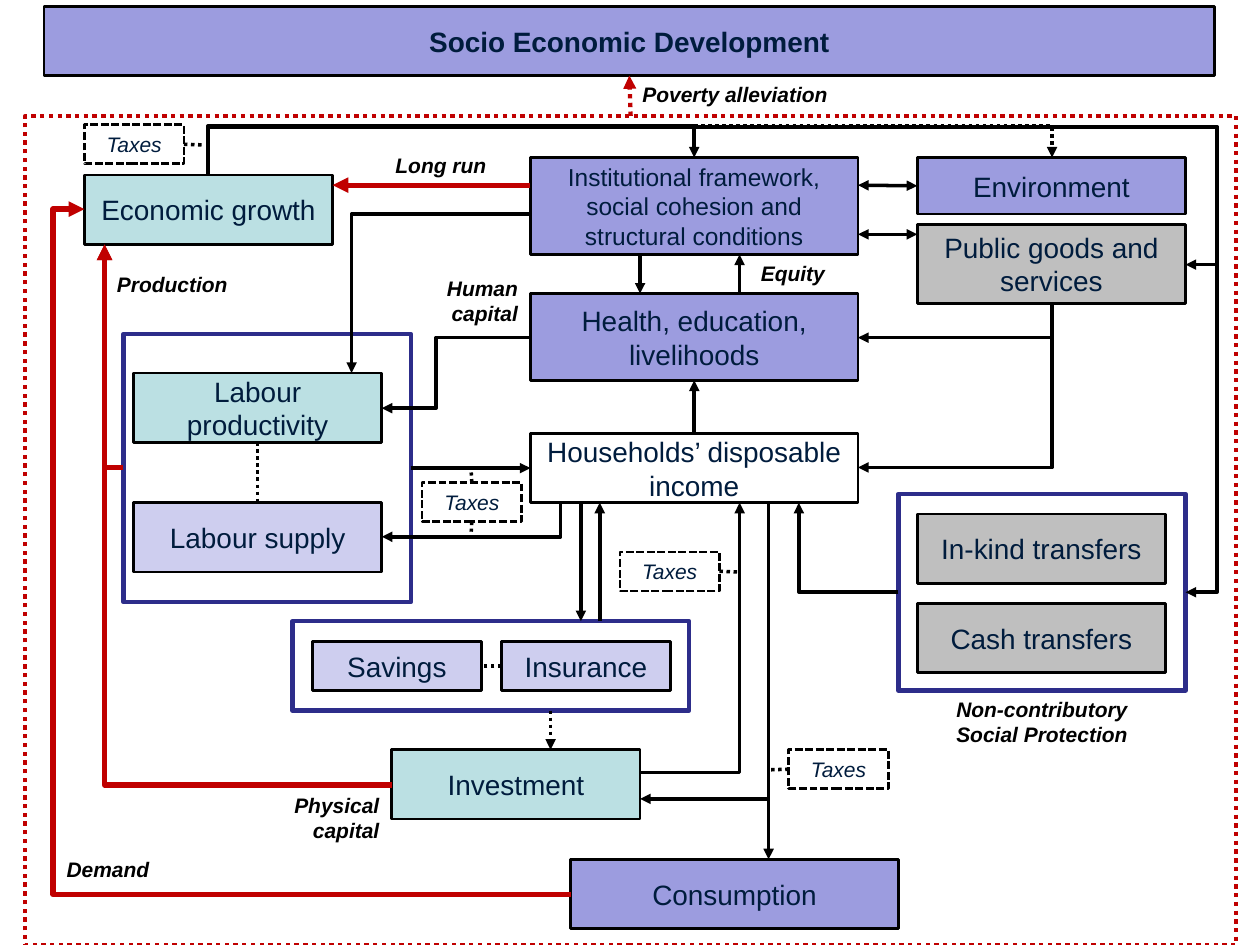
import lxml.etree
import pptx
import pptx.dml.color
import pptx.enum.dml
import pptx.enum.shapes
import pptx.enum.text
import pptx.oxml.ns
import pptx.util

Inches = pptx.util.Inches
DASH = pptx.enum.dml.MSO_LINE
ALIGN = pptx.enum.text.PP_ALIGN
TOP, LEFT, BOTTOM, RIGHT = range(4)
COLORS = {"black": "000000", "navy": "001C3D", "red": "C00000", "frame": "2D2D8A",
          "violet": "9C9CDF", "lilac": "CECEEF", "teal": "BBE0E3", "grey": "BFBFBF"}
LINES = {
    "flow": {"color": "black", "width": 2, "tail": True},
    "two-way": {"color": "black", "width": 2, "head": True, "tail": True},
    "link": {"color": "black", "width": 2, "dash": DASH.ROUND_DOT},
    "dotted": {"color": "black", "width": 2, "dash": DASH.ROUND_DOT, "tail": True},
    "growth": {"color": "red", "width": 3, "tail": True},
    "goal": {"color": "red", "width": 2.5, "dash": DASH.ROUND_DOT, "tail": True},
    "scope": {"color": "red", "width": 2.5, "dash": DASH.ROUND_DOT},
    "group": {"color": "frame", "width": 2.5},
    "box": {"color": "black", "width": 1.5},
    "tax": {"color": "black", "width": 1.5, "dash": DASH.SQUARE_DOT},
}


def rgb(name):
    """Return the named colour."""
    return pptx.dml.color.RGBColor.from_string(COLORS[name])


def style_line(shape, name):
    """Give a shape or connector one of the named line styles."""
    style = LINES[name]
    line = shape.line
    line.color.rgb = rgb(style["color"])
    line.width = pptx.util.Pt(style["width"])
    if "dash" in style:
        line.dash_style = style["dash"]
    properties = shape._element.spPr.find(pptx.oxml.ns.qn("a:ln"))
    for key, tag in (("head", "a:headEnd"), ("tail", "a:tailEnd")):
        if style.get(key):
            end = lxml.etree.SubElement(properties, pptx.oxml.ns.qn(tag))
            end.set("type", "triangle")


def write(shape, text, alignment, color, **formats):
    """Write the lines of text into a shape with one format."""
    frame = shape.text_frame
    frame.word_wrap = True
    for index, words in enumerate(text.split("\n")):
        paragraph = frame.add_paragraph() if index else frame.paragraphs[0]
        paragraph.alignment = alignment
        run = paragraph.add_run()
        run.text = words
        run.font.color.rgb = rgb(color)
        for key, value in {"name": "Arial", **formats}.items():
            setattr(run.font, key, value)


def add_box(slide, box, text="", fill=None, line="box", size=16, **formats):
    """Add a rectangle with centred text and return it."""
    shape = slide.shapes.add_shape(
        pptx.enum.shapes.MSO_SHAPE.RECTANGLE, *map(Inches, box))
    shape.shadow.inherit = False
    if fill:
        shape.fill.solid()
        shape.fill.fore_color.rgb = rgb(fill)
    else:
        shape.fill.background()
    style_line(shape, line)
    if text:
        shape.text_frame.vertical_anchor = pptx.enum.text.MSO_ANCHOR.MIDDLE
        write(shape, text, ALIGN.CENTER, "navy", size=pptx.util.Pt(size), **formats)
    return shape


def add_label(slide, box, text, alignment=ALIGN.LEFT):
    """Add a bold italic label."""
    shape = slide.shapes.add_textbox(*map(Inches, box))
    write(shape, text, alignment, "black", size=pptx.util.Pt(12), bold=True, italic=True)


def add_straight(slide, name, start, end, begin=None, finish=None):
    """Add a straight connector, joined to (shape, side) where given."""
    connector = slide.shapes.add_connector(
        pptx.enum.shapes.MSO_CONNECTOR.STRAIGHT, *map(Inches, start + end))
    if begin:
        connector.begin_connect(*begin)
    if finish:
        connector.end_connect(*finish)
    style_line(connector, name)
    lxml.etree.SubElement(connector._element.spPr, pptx.oxml.ns.qn("a:effectLst"))


def add_route(slide, name, *points):
    """Add a line with right-angled bends through the points."""
    corners = [tuple(map(Inches, point)) for point in points]
    builder = slide.shapes.build_freeform(*corners[0])
    builder.add_line_segments(corners[1:], close=False)
    shape = builder.convert_to_shape()
    shape.shadow.inherit = False
    shape.fill.background()
    style_line(shape, name)


def draw_goal(slide, left, top):
    """Draw the development banner above the dotted scope."""
    goal = add_box(slide, (left + 0.15, top, 9.29, 0.55), "Socio Economic Development",
                   "violet", bold=True)
    scope = add_box(slide, (left, top + 0.87, 9.61, 6.58), line="scope")
    add_straight(slide, "goal", (5, 0.92), (5, 0.6), (scope, TOP), (goal, BOTTOM))
    add_label(slide, (left + 4.8, top + 0.55, 1.73, 0.3), "Poverty alleviation")


def draw_labour(slide, left, top):
    """Draw the labour group and return its frame."""
    frame = add_box(slide, (left, top, 2.28, 2.13), line="group")
    productivity, supply = [
        add_box(slide, (left + 0.08, top + drop, 1.97, 0.55), text, fill)
        for drop, text, fill in ((0.31, "Labour productivity", "teal"),
                                 (1.34, "Labour supply", "lilac"))]
    add_straight(slide, "link", (2.05, 3.51), (2.05, 3.99),
                 (productivity, BOTTOM), (supply, TOP))
    return frame


def draw_savings(slide, left, top):
    """Draw the savings and insurance group."""
    add_box(slide, (left, top, 3.15, 0.71), line="group")
    savings, insurance = [
        add_box(slide, (left + shift, top + 0.16, 1.34, 0.39), text, "lilac")
        for shift, text in ((0.16, "Savings"), (1.66, "Insurance"))]
    add_straight(slide, "link", (3.98, 5.29), (3.82, 5.29),
                 (insurance, LEFT), (savings, RIGHT))


def draw_transfers(slide, left, top):
    """Draw the social protection group with its caption."""
    add_box(slide, (left, top, 2.28, 1.56), line="group")
    for drop, text in ((0.16, "In-kind transfers"), (0.87, "Cash transfers")):
        add_box(slide, (left + 0.15, top + drop, 1.97, 0.55), text, "grey")
    add_label(slide, (left, top + 1.56, 2.28, 0.5),
              "Non-contributory\nSocial Protection", ALIGN.CENTER)


def draw_conditions(slide, left, top):
    """Draw the central chain of boxes and its two neighbours."""
    institution = "Institutional framework, social cohesion and structural conditions"
    add_box(slide, (left, top, 2.6, 0.77), institution, "violet", size=14)
    health = add_box(slide, (left, top + 1.08, 2.6, 0.69),
                     "Health, education, livelihoods", "violet")
    income = add_box(slide, (left, top + 2.19, 2.6, 0.55), "Households’ disposable income")
    environment = add_box(slide, (left + 3.07, top, 2.13, 0.45), "Environment", "violet")
    add_box(slide, (left + 3.07, top + 0.53, 2.13, 0.63),
            "Public goods and services", "grey")
    add_straight(slide, "flow", (5.51, 3.44), (5.51, 3.02), (income, TOP), (health, BOTTOM))
    add_straight(slide, "two-way", (7.28, 1.47), (6.81, 1.47), (environment, LEFT))
    return income


def draw_outputs(slide, left, top):
    """Draw growth, investment and consumption."""
    add_box(slide, (left, top, 1.97, 0.55), "Economic growth", "teal")
    add_box(slide, (left + 2.44, top + 4.56, 1.97, 0.55), "Investment", "teal")
    add_box(slide, (left + 3.86, top + 5.43, 2.6, 0.55), "Consumption", "violet")


def draw_tax(slide, left, top, *ties):
    """Draw a tax box with a dotted tie from each (side, end point)."""
    tax = add_box(slide, (left, top, 0.79, 0.31), "Taxes", line="tax", size=12, italic=True)
    for side, end in ties:
        add_straight(slide, "link", (left, top), end, (tax, side))


def draw_flows(slide, labour, income):
    """Draw the arrows between the regions and their labels."""
    add_straight(slide, "flow", (3.27, 3.71), (4.21, 3.71), (labour, RIGHT), (income, LEFT))
    for name, start, end in (
            ("flow", (6.1, 3.99), (6.1, 6.82)), ("growth", (4.21, 1.47), (2.64, 1.47)),
            ("flow", (5.87, 2.33), (5.87, 2.02)), ("flow", (5.08, 2.02), (5.08, 2.33)),
            ("two-way", (7.28, 1.86), (6.81, 1.86)), ("flow", (4.76, 4.93), (4.76, 3.99)),
            ("flow", (4.61, 3.99), (4.61, 4.93)), ("dotted", (4.37, 5.64), (4.37, 5.95))):
        add_straight(slide, name, start, end)
    growth, public = (1.65, 1.39), (8.35, 2.41)
    for name, *points in (
            ("dotted", growth, (1.65, 1), (8.35, 1), (8.35, 1.25)),
            ("flow", growth, (1.65, 1), (5.51, 1), (5.51, 1.25)),
            ("flow", growth, (1.65, 1.01), (9.66, 1.01), (9.66, 2.1), (9.41, 2.1)),
            ("flow", growth, (1.65, 1.01), (9.66, 1.01), (9.66, 4.7), (9.41, 4.7)),
            ("flow", public, (8.35, 2.68), (6.81, 2.68)),
            ("flow", public, (8.35, 3.71), (6.81, 3.71)),
            ("flow", (7.13, 4.7), (6.34, 4.7), (6.34, 3.99)),
            ("flow", (4.21, 1.7), (2.79, 1.7), (2.79, 2.96)),
            ("flow", (4.21, 2.68), (3.46, 2.68), (3.46, 3.24), (3.03, 3.24)),
            ("flow", (4.45, 3.99), (4.45, 4.26), (3.03, 4.26)),
            ("flow", (6.1, 3.99), (6.1, 6.34), (5.08, 6.34)),
            ("flow", (5.08, 6.13), (5.87, 6.13), (5.87, 3.99)),
            ("growth", (0.98, 3.71), (0.83, 3.71), (0.83, 1.94)),
            ("growth", (3.11, 6.23), (0.83, 6.23), (0.83, 1.94)),
            ("growth", (4.53, 7.1), (0.42, 7.1), (0.42, 1.66), (0.67, 1.66))):
        add_route(slide, name, *points)
    for box, text, alignment in (
            ((2.87, 1.16, 1.26, 0.3), "Long run", ALIGN.CENTER),
            ((5.94, 2.02, 1.26, 0.3), "Equity", ALIGN.LEFT),
            ((3.11, 2.14, 1.1, 0.5), "Human capital", ALIGN.RIGHT),
            ((0.83, 2.11, 1.26, 0.3), "Production", ALIGN.LEFT),
            ((0.43, 6.75, 1.57, 0.3), "Demand", ALIGN.LEFT),
            ((2.01, 6.24, 1.1, 0.5), "Physical capital", ALIGN.RIGHT)):
        add_label(slide, box, text, alignment)


def main():
    """Build and save the slide."""
    presentation = pptx.Presentation()
    presentation.slide_width, presentation.slide_height = Inches(10), Inches(7.5)
    slide = presentation.slides.add_slide(presentation.slide_layouts[6])
    draw_goal(slide, 0.2, 0.05)
    draw_outputs(slide, 0.67, 1.39)
    labour = draw_labour(slide, 0.98, 2.65)
    income = draw_conditions(slide, 4.21, 1.25)
    draw_savings(slide, 2.32, 4.93)
    draw_transfers(slide, 7.13, 3.92)
    draw_flows(slide, labour, income)
    draw_tax(slide, 0.67, 0.99, (RIGHT, (1.61, 1.15)))
    draw_tax(slide, 3.35, 3.83, (TOP, (3.74, 3.75)), (BOTTOM, (3.74, 4.22)))
    draw_tax(slide, 4.92, 4.38, (RIGHT, (5.87, 4.54)))
    draw_tax(slide, 6.26, 5.95, (LEFT, (6.1, 6.11)))
    presentation.save("out.pptx")


if __name__ == "__main__":
    main()
